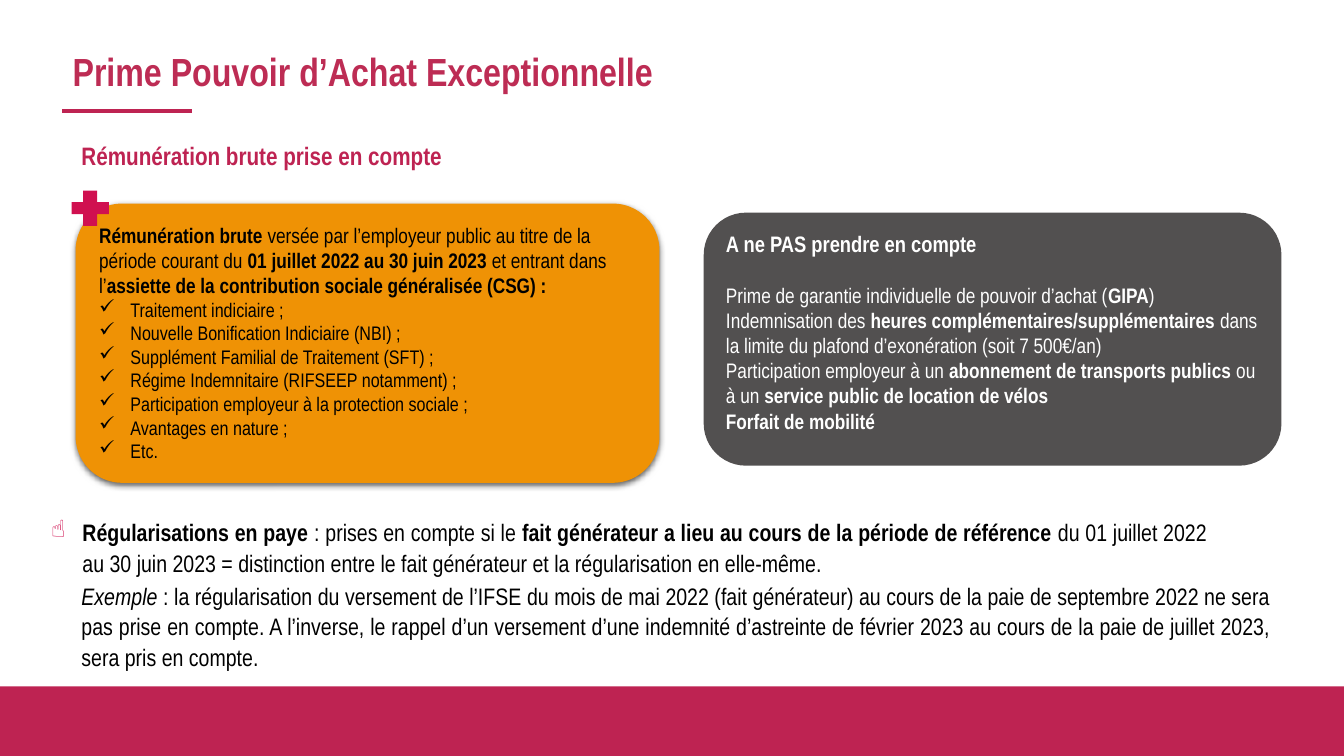
import pptx
import pptx.util
import pptx.dml.color
import pptx.enum.shapes
import pptx.enum.text
import pptx.oxml
import pptx.oxml.ns
from dataclasses import dataclass

Inches, Pt = pptx.util.Inches, pptx.util.Pt
SHAPE = pptx.enum.shapes.MSO_SHAPE
ALIGN = pptx.enum.text.PP_ALIGN
NS = pptx.oxml.ns.nsdecls("a")


@dataclass(frozen=True)
class Theme:
    font: str = "Arial Narrow"
    raspberry: str = "BE2352"
    title_red: str = "BD2C54"
    accent: str = "D01050"
    orange: str = "EF9205"
    grey: str = "3B3838"
    black: str = "000000"
    white: str = "FFFFFF"
    title: int = 28
    subtitle: int = 18
    note: int = 17
    heading: int = 16
    body: int = 15
    item: int = 14


def rgb(value):
    return pptx.dml.color.RGBColor.from_string(value)


class SlideBuilder:
    def __init__(self, slide, theme):
        self.s, self.theme = slide, theme

    def frame(self, sp):
        tf = sp.text_frame
        settings = {"word_wrap": True,
                    "auto_size": pptx.enum.text.MSO_AUTO_SIZE.NONE,
                    "vertical_anchor": pptx.enum.text.MSO_ANCHOR.TOP}
        for name, value in settings.items():
            setattr(tf, name, value)
        return tf

    def bullet(self, p, char, color):
        """Hang a bullet character in front of the paragraph."""
        pPr = p._p.get_or_add_pPr()
        indent = Inches(0.31)
        pPr.set("marL", str(indent))
        pPr.set("indent", str(-indent))
        for xml in (f'<a:buClr {NS}><a:srgbClr val="{color}"/></a:buClr>',
                    f'<a:buChar {NS} char="{char}"/>'):
            pPr.append(pptx.oxml.parse_xml(xml))

    def paragraph(self, tf, text, size, color, emphasis="bold", bullet=None,
                  bullet_color=None, **formats):
        """Add a paragraph; stretches between asterisks get the emphasis."""
        p = tf.paragraphs[0]
        if p.runs:
            p = tf.add_paragraph()
        if bullet:
            self.bullet(p, bullet, bullet_color or color)
        for name, value in {"alignment": ALIGN.LEFT, **formats}.items():
            setattr(p, name, value)
        for i, part in enumerate(text.split("*")):
            if part:
                r = p.add_run()
                r.text = part
                r.font.color.rgb = rgb(color)
                font = {"name": self.theme.font, "size": Pt(size),
                        "bold": False, emphasis: i % 2 == 1}
                for name, value in font.items():
                    setattr(r.font, name, value)

    def title(self, box, text):
        sp = self.s.shapes.title
        for name, value in zip(("left", "top", "width", "height"), box):
            setattr(sp, name, Inches(value))
        self.paragraph(self.frame(sp), text, self.theme.title,
                       self.theme.title_red, line_spacing=0.9)

    def text(self, box, text, size, color, **formats):
        sp = self.s.shapes.add_textbox(*map(Inches, box))
        self.paragraph(self.frame(sp), text, size, color, **formats)

    def shape(self, kind, box, fill, alpha=None, shadow=False):
        sp = self.s.shapes.add_shape(kind, *map(Inches, box))
        sp.shadow.inherit = False
        sp.fill.solid()
        sp.fill.fore_color.rgb = rgb(fill)
        sp.line.fill.background()
        if alpha:
            color = sp.fill._xPr.find(".//" + pptx.oxml.ns.qn("a:srgbClr"))
            color.append(pptx.oxml.parse_xml(f'<a:alpha {NS} val="{alpha * 1000}"/>'))
        if shadow:
            effects = sp._element.spPr.find(pptx.oxml.ns.qn("a:effectLst"))
            effects.append(pptx.oxml.parse_xml(
                f'<a:outerShdw {NS} blurRad="{Pt(4.5)}" dist="{Pt(1.5)}" '
                'dir="5400000" algn="ctr" rotWithShape="0">'
                f'<a:srgbClr val="{self.theme.black}"><a:alpha val="63000"/>'
                '</a:srgbClr></a:outerShdw>'))
        return sp

    def line(self, start, end, color, width):
        sp = self.s.shapes.add_connector(
            pptx.enum.shapes.MSO_CONNECTOR.STRAIGHT, *map(Inches, start + end))
        sp.line.color.rgb = rgb(color)
        sp.line.width = Pt(width)
        sp._element.spPr.append(pptx.oxml.parse_xml(f"<a:effectLst {NS}/>"))


def main():
    prs = pptx.Presentation()
    prs.slide_width, prs.slide_height = Inches(13.33), Inches(7.5)
    theme = Theme()
    b = SlideBuilder(prs.slides.add_slide(prs.slide_layouts[5]), theme)

    # Footer band, title and subtitle
    b.shape(SHAPE.RECTANGLE, (0, 6.81, 13.33, 0.69), theme.raspberry)
    b.title((0.62, 0.47, 6.58, 0.63), "*Prime Pouvoir d’Achat Exceptionnelle*")
    b.line((0.62, 1.1), (1.9, 1.1), theme.raspberry, 3)
    b.text((0.71, 1.34, 3.9, 0.4), "*Rémunération brute prise en compte*",
           theme.subtitle, theme.raspberry)

    # Notes on back payments
    note = {"alignment": ALIGN.JUSTIFY, "line_spacing": 1.07}
    b.text((0.41, 5.07, 11.66, 0.68),
           "*Régularisations en paye *: prises en compte si le *fait générateur a lieu "
           "au cours de la période de référence *du 01 juillet 2022 au 30 juin 2023 = "
           "distinction entre le fait générateur et la régularisation en elle-même.",
           theme.note, theme.black, bullet="☝", bullet_color=theme.accent, **note)
    b.text((0.71, 5.7, 12, 0.71),
           "*Exemple *: la régularisation du versement de l’IFSE du mois de mai 2022 "
           "(fait générateur) au cours de la paie de septembre 2022 ne sera pas prise en "
           "compte. A l’inverse, le rappel d’un versement d’une indemnité d’astreinte de "
           "février 2023 au cours de la paie de juillet 2023, sera pris en compte.",
           theme.note, theme.black, emphasis="italic", **note)

    # Included pay
    included = b.shape(SHAPE.ROUNDED_RECTANGLE, (0.75, 2.02, 5.79, 2.77),
                       theme.orange, shadow=True)
    tf = b.frame(included)
    b.paragraph(tf, "*Rémunération brute* versée par l’employeur public au titre de la "
                "période courant du *01 juillet 2022 au 30 juin 2023* et entrant dans "
                "l’*assiette de la contribution sociale généralisée (CSG) :*",
                theme.body, theme.black)
    for item in ("Traitement indiciaire ;",
                 "Nouvelle Bonification Indiciaire (NBI) ;",
                 "Supplément Familial de Traitement (SFT) ;",
                 "Régime Indemnitaire (RIFSEEP notamment) ;",
                 "Participation employeur à la protection sociale ;",
                 "Avantages en nature ;",
                 "Etc."):
        b.paragraph(tf, item, theme.item, theme.black, bullet="✓")

    # Excluded pay
    excluded = b.shape(SHAPE.ROUNDED_RECTANGLE, (6.98, 2.11, 5.73, 2.51),
                       theme.grey, alpha=88)
    tf = b.frame(excluded)
    b.paragraph(tf, "*A ne PAS prendre en compte*", theme.heading, theme.white,
                space_after=Pt(18))
    for item in ("Prime de garantie individuelle de pouvoir d’achat (*GIPA*)",
                 "Indemnisation des *heures complémentaires/supplémentaires *dans la "
                 "limite du plafond d’exonération (soit 7 500€/an)",
                 "Participation employeur à un* abonnement de transports publics *ou à "
                 "un *service public de location de vélos*",
                 "*Forfait de mobilité*"):
        b.paragraph(tf, item, theme.body, theme.white)

    # Plus sign on the included pay
    plus = b.shape(SHAPE.CROSS, (0.71, 1.89, 0.37, 0.35), theme.accent)
    plus.adjustments[0] = 0.33

    prs.save("out.pptx")


if __name__ == "__main__":
    main()
